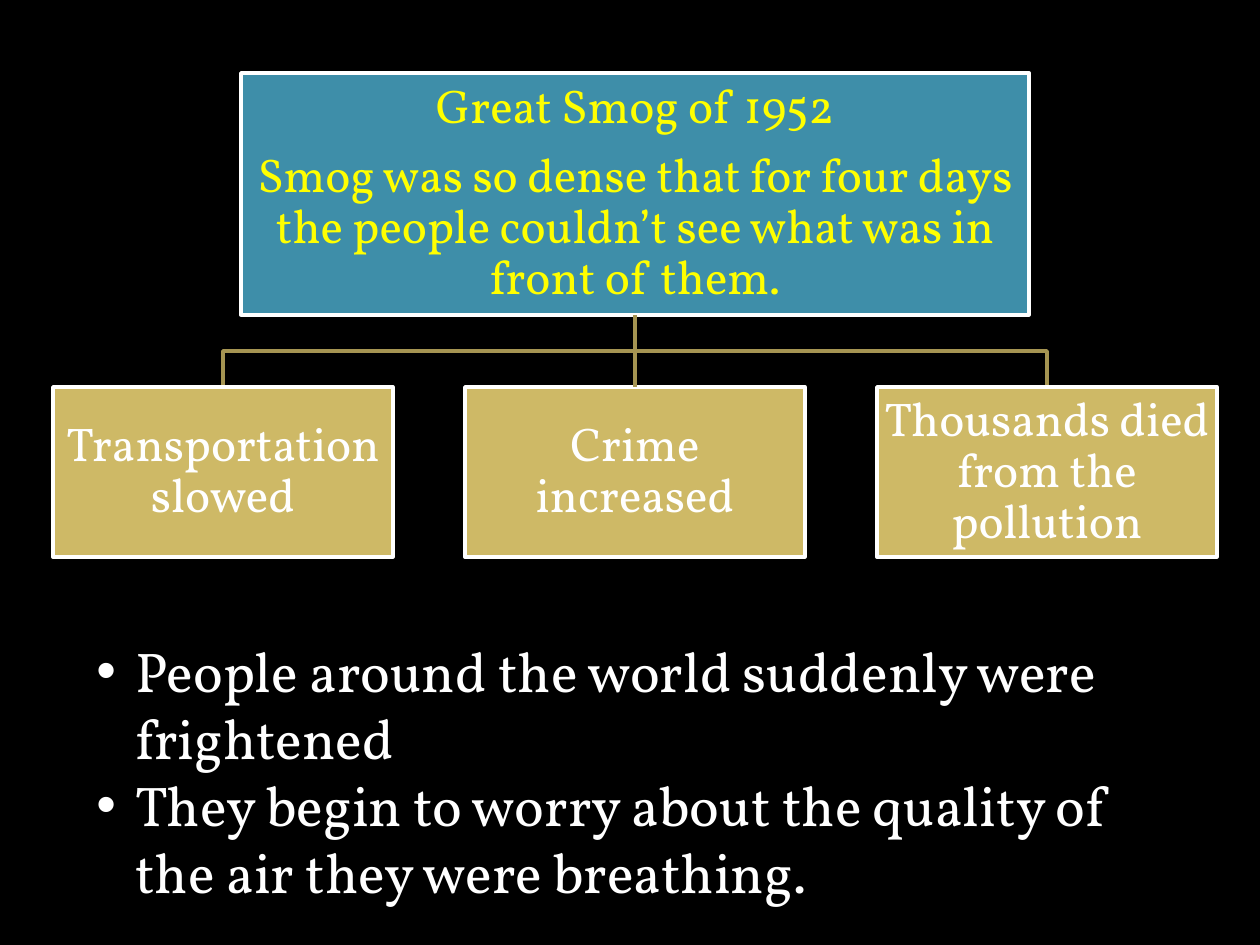
from dataclasses import dataclass

from lxml.etree import SubElement
from pptx import Presentation
from pptx.dml.color import RGBColor
from pptx.enum.shapes import MSO_CONNECTOR, MSO_SHAPE
from pptx.enum.text import MSO_ANCHOR, PP_ALIGN
from pptx.oxml.ns import qn
from pptx.util import Pt

EMU_PER_PX = 914400 / 126


def px(length):
    return round(length * EMU_PER_PX)


@dataclass(frozen=True)
class Theme:
    font: str = "Vollkorn"
    background: str = "000000"
    event_fill: str = "3E8EA9"
    event_text: str = "FFFF00"
    effect_fill: str = "CEB966"
    light: str = "FFFFFF"
    branch: str = "A59452"
    box_size: int = 27
    body_size: int = 32
    line_width: int = 2


def write_text(frame, paragraphs, *, font, size, color, align=PP_ALIGN.LEFT,
               spacing=1.0, after=0, bullet=None, indent=0):
    frame.word_wrap = True
    for index, wording in enumerate(paragraphs):
        paragraph = frame.add_paragraph() if index else frame.paragraphs[0]
        paragraph.alignment = align
        paragraph.line_spacing = spacing
        paragraph.space_after = Pt(after)
        run = paragraph.add_run()
        run.text = wording
        run.font.name = font
        run.font.size = Pt(size)
        run.font.color.rgb = RGBColor.from_string(color)
        if bullet:
            properties = paragraph._p.get_or_add_pPr()
            properties.set("marL", str(px(indent)))
            properties.set("indent", str(-px(indent)))
            SubElement(properties, qn("a:buFont")).set("typeface", "Arial")
            SubElement(properties, qn("a:buChar")).set("char", bullet)


class SlideBuilder:
    def __init__(self, slide, theme):
        self.slide = slide
        self.theme = theme
        fill = slide.background.fill
        fill.solid()
        fill.fore_color.rgb = RGBColor.from_string(theme.background)

    def style_line(self, line, color):
        line.color.rgb = RGBColor.from_string(color)
        line.width = Pt(self.theme.line_width)

    def box(self, bounds, paragraphs, fill, color):
        box = self.slide.shapes.add_shape(MSO_SHAPE.RECTANGLE, *map(px, bounds))
        box.shadow.inherit = False
        box.fill.solid()
        box.fill.fore_color.rgb = RGBColor.from_string(fill)
        self.style_line(box.line, self.theme.light)
        frame = box.text_frame
        frame.vertical_anchor = MSO_ANCHOR.MIDDLE
        frame.margin_left = frame.margin_right = px(2)
        frame.margin_top = frame.margin_bottom = px(2)
        write_text(frame, paragraphs, font=self.theme.font,
                   size=self.theme.box_size, color=color,
                   align=PP_ALIGN.CENTER, spacing=0.9, after=10)
        return box

    def elbow(self, points):
        start, *corners = [(px(x), px(y)) for x, y in points]
        outline = self.slide.shapes.build_freeform(*start)
        outline.add_line_segments(corners, close=False)
        branch = outline.convert_to_shape()
        branch.shadow.inherit = False
        branch.fill.background()
        self.style_line(branch.line, self.theme.branch)

    def straight(self, upper, lower):
        stem = self.slide.shapes.add_connector(MSO_CONNECTOR.STRAIGHT, 0, 0, 0, 0)
        stem.begin_connect(upper, 2)
        stem.end_connect(lower, 0)
        self.style_line(stem.line, self.theme.branch)
        SubElement(stem._element.spPr, qn("a:effectLst"))

    def bullets(self, bounds, paragraphs):
        body = self.slide.shapes.add_textbox(*map(px, bounds))
        write_text(body.text_frame, paragraphs, font=self.theme.font,
                   size=self.theme.body_size, color=self.theme.light,
                   bullet="•", indent=39)


def main():
    theme = Theme()
    deck = Presentation()
    deck.slide_width, deck.slide_height = px(1260), px(945)
    builder = SlideBuilder(deck.slides.add_slide(deck.slide_layouts[6]), theme)

    center, event_top, event_width, event_height = 635, 73, 788, 242
    effect_top, effect_width, effect_height, pitch = 387, 340, 170, 412
    event_bottom = event_top + event_height
    fork = (event_bottom + effect_top) // 2

    for effect_center in (center + pitch, center - pitch):
        builder.elbow([(center, event_bottom), (center, fork),
                       (effect_center, fork), (effect_center, effect_top)])

    event = builder.box(
        (center - event_width // 2, event_top, event_width, event_height),
        ["Great Smog of 1952",
         "Smog was so dense that for four days the people couldn’t see "
         "what was in front of them."],
        theme.event_fill, theme.event_text)

    effects = [
        builder.box(
            (center + step * pitch - effect_width // 2, effect_top,
             effect_width, effect_height),
            [wording], theme.effect_fill, theme.light)
        for step, wording in enumerate(
            ["Transportation slowed", "Crime increased",
             "Thousands died from the pollution"], start=-1)
    ]
    builder.straight(event, effects[1])

    builder.bullets((84, 630, 1071, 386), [
        "People around the world suddenly were frightened",
        "They begin to worry about the quality of the air they were breathing.",
    ])
    deck.save("out.pptx")


if __name__ == "__main__":
    main()
